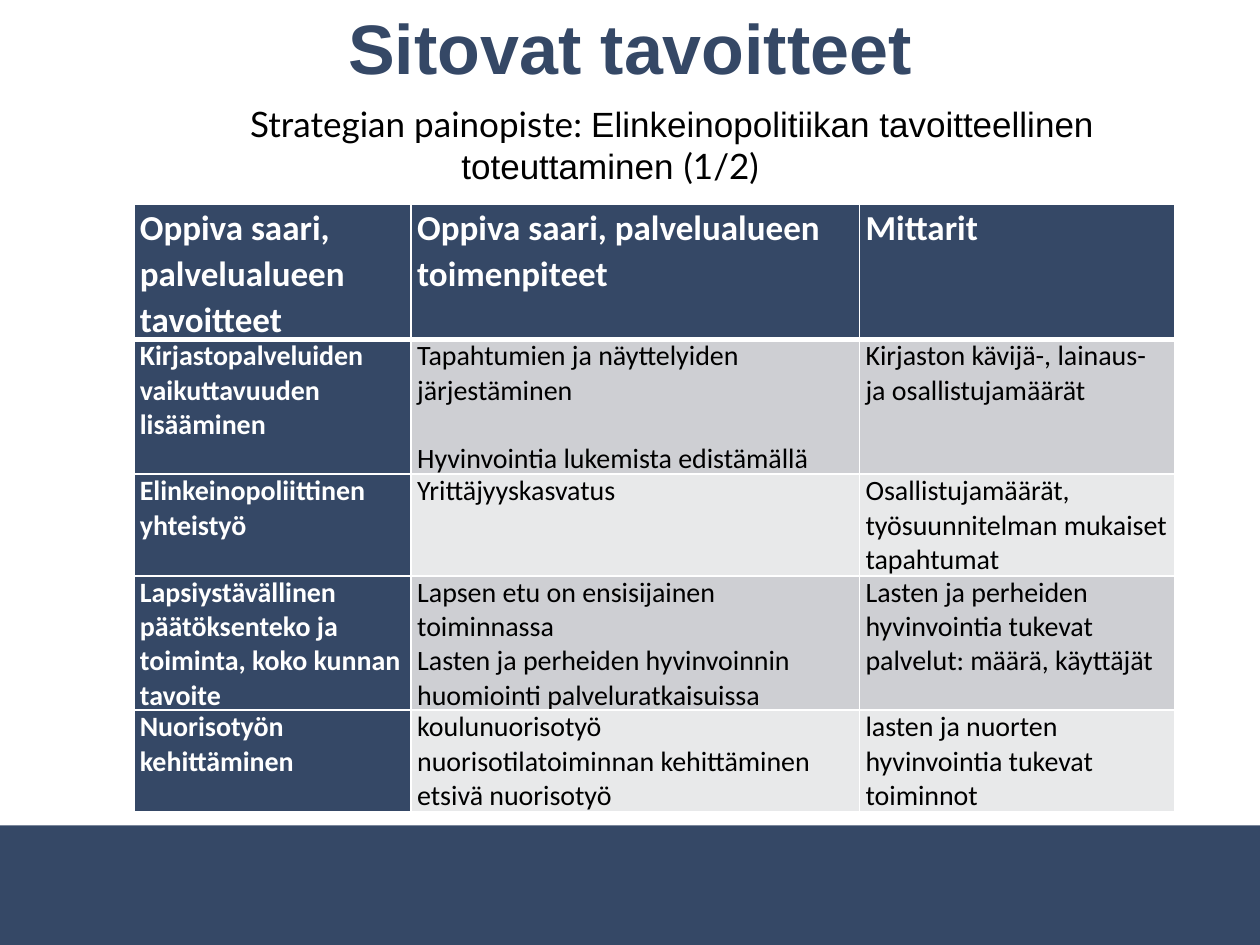
"""Build the slide of binding goals with its table of goals, measures and indicators."""
import pptx
import pptx.util
import pptx.dml.color
import pptx.enum.text
import pptx.oxml
import pptx.oxml.ns
from pptx.util import Cm, Pt

NAVY, WHITE, BLACK = "354866", "FFFFFF", "000000"
BANDS = ["CECFD3", "E8E9EA"]


def color(value):
    return pptx.dml.color.RGBColor.from_string(value)


def style(font, name, size, value, bold=False):
    font.name, font.size, font.bold = name, Pt(size), bold
    font.color.rgb = color(value)


presentation = pptx.Presentation()
presentation.slide_width, presentation.slide_height = Cm(25.4), Cm(19.05)
slide = presentation.slides.add_slide(presentation.slide_layouts[6])
shapes = slide.shapes

footer = shapes.add_shape(
    pptx.enum.shapes.MSO_SHAPE.RECTANGLE, Cm(0), Cm(16.64), Cm(25.4), Cm(2.49))
footer.shadow.inherit = False
footer.fill.solid()
footer.fill.fore_color.rgb = color(NAVY)
footer.line.fill.background()

title = shapes.add_textbox(Cm(1.27), Cm(-0.66), Cm(22.86), Cm(3.18)).text_frame
subtitle = shapes.add_textbox(Cm(0.3), Cm(1.93), Cm(24), Cm(1.96)).text_frame
for heading in (title, subtitle):
    heading.word_wrap = True
    heading.vertical_anchor = pptx.enum.text.MSO_ANCHOR.MIDDLE
    heading.paragraphs[0].alignment = pptx.enum.text.PP_ALIGN.CENTER

title.paragraphs[0].text = "Sitovat tavoitteet"
style(title.paragraphs[0].font, "Arial", 40, NAVY, True)

focus = subtitle.paragraphs[0]
focus._p.get_or_add_pPr().set("indent", str(Cm(2.5)))
for words, typeface in [
    ("Strategian painopiste: ", "Lato"),
    ("Elinkeinopolitiikan tavoitteellinen toteuttaminen ", "Arial"),
    ("(1/2)", "Lato"),
]:
    run = focus.add_run()
    run.text = words
    style(run.font, typeface, 20, BLACK)

goals = [
    ("Oppiva saari, palvelualueen tavoitteet",
     "Oppiva saari, palvelualueen toimenpiteet",
     "Mittarit"),
    ("Kirjastopalveluiden vaikuttavuuden lisääminen",
     "Tapahtumien ja näyttelyiden järjestäminen\nHyvinvointia lukemista edistämällä",
     "Kirjaston kävijä-, lainaus- ja osallistujamäärät"),
    ("Elinkeinopoliittinen yhteistyö",
     "Yrittäjyyskasvatus",
     "Osallistujamäärät, työsuunnitelman mukaiset tapahtumat"),
    ("Lapsiystävällinen päätöksenteko ja toiminta, koko kunnan tavoite",
     "Lapsen etu on ensisijainen toiminnassa\n"
     "Lasten ja perheiden hyvinvoinnin huomiointi palveluratkaisuissa",
     "Lasten ja perheiden hyvinvointia tukevat palvelut: määrä, käyttäjät"),
    ("Nuorisotyön kehittäminen",
     "koulunuorisotyö\nnuorisotilatoiminnan kehittäminen\netsivä nuorisotyö",
     "lasten ja nuorten hyvinvointia tukevat toiminnot"),
]
widths = [5.59, 9.04, 6.35]
heights = [2.7, 2.7, 2.05, 2.7, 2.05]
table = shapes.add_table(
    len(goals), len(widths), Cm(2.7), Cm(4.12), Cm(sum(widths)), Cm(sum(heights))).table
for column, width in zip(table.columns, widths):
    column.width = Cm(width)
for row, height in zip(table.rows, heights):
    row.height = Cm(height)

for r, goal in enumerate(goals):
    for c, content in enumerate(goal):
        cell = table.cell(r, c)
        dark = r == 0 or c == 0
        cell.margin_left = cell.margin_right = Cm(0.12)
        cell.margin_top = cell.margin_bottom = Cm(0)
        cell.text = content
        for paragraph in cell.text_frame.paragraphs:
            style(paragraph.font, "Calibri", 20 if r == 0 else 16,
                  WHITE if dark else BLACK, dark)
            if r == 0:
                paragraph.line_spacing = 1.07
                paragraph.space_after = Pt(8)
        cell.fill.solid()
        cell.fill.fore_color.rgb = color(NAVY if dark else BANDS[(r - 1) % 2])
        for position, side in enumerate("LRTB"):
            thick = (r, side) in [(0, "B"), (1, "T")]
            border = pptx.oxml.parse_xml(
                f'<a:ln{side} {pptx.oxml.ns.nsdecls("a")} w="{Pt(3 if thick else 1)}">'
                f'<a:solidFill><a:srgbClr val="{WHITE}"/></a:solidFill></a:ln{side}>')
            cell._tc.get_or_add_tcPr().insert(position, border)

table.cell(1, 1).text_frame.paragraphs[1].space_before = Pt(19.5)

presentation.save("out.pptx")
